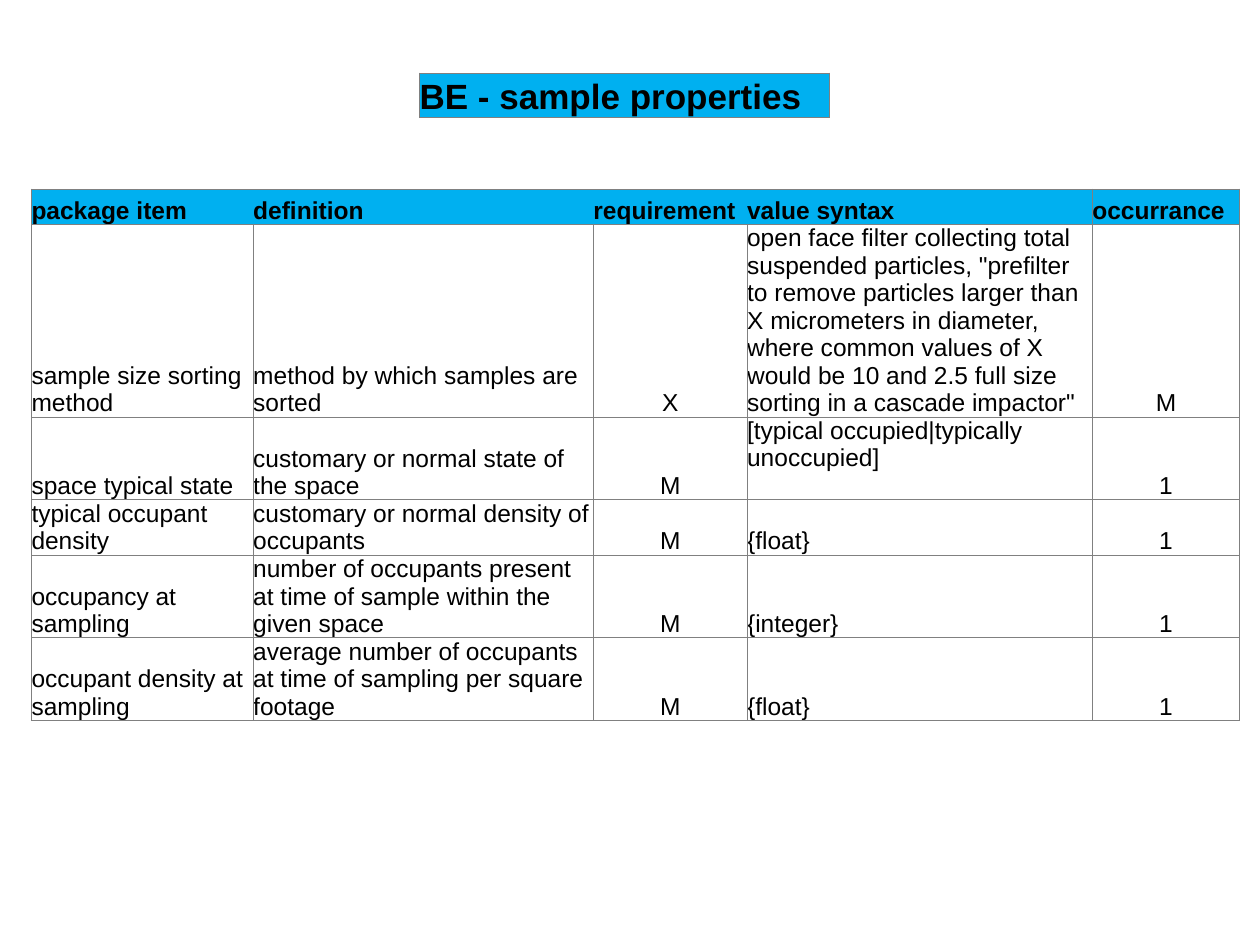
from dataclasses import dataclass

from lxml.etree import SubElement
from pptx import Presentation
from pptx.dml.color import RGBColor
from pptx.enum.text import MSO_ANCHOR as Anchor, PP_ALIGN as Align
from pptx.oxml.ns import qn
from pptx.table import Table, _Cell as Cell
from pptx.util import Inches, Pt

BLUE = RGBColor(0x00, 0xB0, 0xF0)
BLACK = RGBColor(0x00, 0x00, 0x00)
GREY = RGBColor(0x80, 0x80, 0x80)
FONT = "Arial"
BODY_SIZE = 14
LINE_HEIGHT = 0.22
ALL_SIDES = "LRTB"


@dataclass(frozen=True)
class Column:
    heading: str
    width: float
    align: Align = Align.LEFT
    heading_sides: str = "TB"


@dataclass(frozen=True)
class Item:
    height: float
    values: tuple[str, ...]


COLUMNS = (
    Column("package item", 1.76, heading_sides="LTB"),
    Column("definition", 2.7),
    Column("requirement", 1.22, Align.CENTER),
    Column("value syntax", 2.74, heading_sides="RTB"),
    Column("occurrance", 1.17, Align.CENTER, ALL_SIDES),
)
HEADING_HEIGHT = 0.28
SYNTAX_COLUMN = 3
STATE_SYNTAX = "[typical occupied|typically unoccupied]"
ITEMS = (
    Item(1.53, (
        "sample size sorting method", "method by which samples are sorted", "X",
        'open face filter collecting total suspended particles, "prefilter to '
        "remove particles larger than X micrometers in diameter, where common "
        'values of X would be 10 and 2.5 full size sorting in a cascade impactor"',
        "M")),
    Item(0.65, ("space typical state", "customary or normal state of the space",
                "M", STATE_SYNTAX, "1")),
    Item(0.44, ("typical occupant density",
                "customary or normal density of occupants", "M", "{float}", "1")),
    Item(0.65, ("occupancy at sampling",
                "number of occupants present at time of sample within the given space",
                "M", "{integer}", "1")),
    Item(0.65, ("occupant density at sampling",
                "average number of occupants at time of sampling per square footage",
                "M", "{float}", "1")),
)


def draw_borders(cell: Cell, sides: str) -> None:
    """Outline the named sides; the other sides get no line."""
    properties = cell._tc.get_or_add_tcPr()
    for index, side in enumerate(ALL_SIDES):
        line = properties.makeelement(qn(f"a:ln{side}"), {"w": str(Pt(0.5))})
        properties.insert(index, line)
        if side in sides:
            fill = SubElement(line, qn("a:solidFill"))
            SubElement(fill, qn("a:srgbClr"), val=str(GREY))
        else:
            SubElement(line, qn("a:noFill"))


def write_cell(cell: Cell, text: str, size: float = BODY_SIZE,
               align: Align = Align.LEFT, heading: bool = False,
               sides: str = ALL_SIDES) -> None:
    cell.margin_left = cell.margin_right = 0
    cell.margin_top = cell.margin_bottom = 0
    cell.vertical_anchor = Anchor.BOTTOM
    if heading:
        cell.fill.solid()
        cell.fill.fore_color.rgb = BLUE
    else:
        cell.fill.background()
    paragraph = cell.text_frame.paragraphs[0]
    paragraph.alignment = align
    run = paragraph.add_run()
    run.text = text
    run.font.name = FONT
    run.font.size = Pt(size)
    run.font.bold = heading
    run.font.color.rgb = BLACK
    draw_borders(cell, sides)


def add_grid(slide, left: float, top: float, widths: list[float],
             heights: list[float]) -> Table:
    table = slide.shapes.add_table(
        len(heights), len(widths), Inches(left), Inches(top),
        Inches(sum(widths)), Inches(sum(heights))).table
    table.first_row = table.horz_banding = False
    for column, width in zip(table.columns, widths):
        column.width = Inches(width)
    for row, height in zip(table.rows, heights):
        row.height = Inches(height)
    return table


def add_properties(slide) -> None:
    properties = add_grid(slide, 0.25, 1.5, [column.width for column in COLUMNS],
                          [HEADING_HEIGHT] + [item.height for item in ITEMS])
    for x, column in enumerate(COLUMNS):
        write_cell(properties.cell(0, x), column.heading, heading=True,
                   sides=column.heading_sides)
        for y, item in enumerate(ITEMS, start=1):
            write_cell(properties.cell(y, x), item.values[x], align=column.align)
            if item.values[x] == STATE_SYNTAX:
                properties.cell(y, SYNTAX_COLUMN).margin_bottom = Inches(LINE_HEIGHT)


def main() -> None:
    deck = Presentation()
    deck.slide_width, deck.slide_height = Inches(10), Inches(7.5)
    slide = deck.slides.add_slide(deck.slide_layouts.get_by_name("Blank"))
    banner = add_grid(slide, 3.33, 0.58, [3.25], [0.35])
    write_cell(banner.cell(0, 0), "BE - sample properties", size=20, heading=True)
    add_properties(slide)
    deck.save("out.pptx")


if __name__ == "__main__":
    main()
